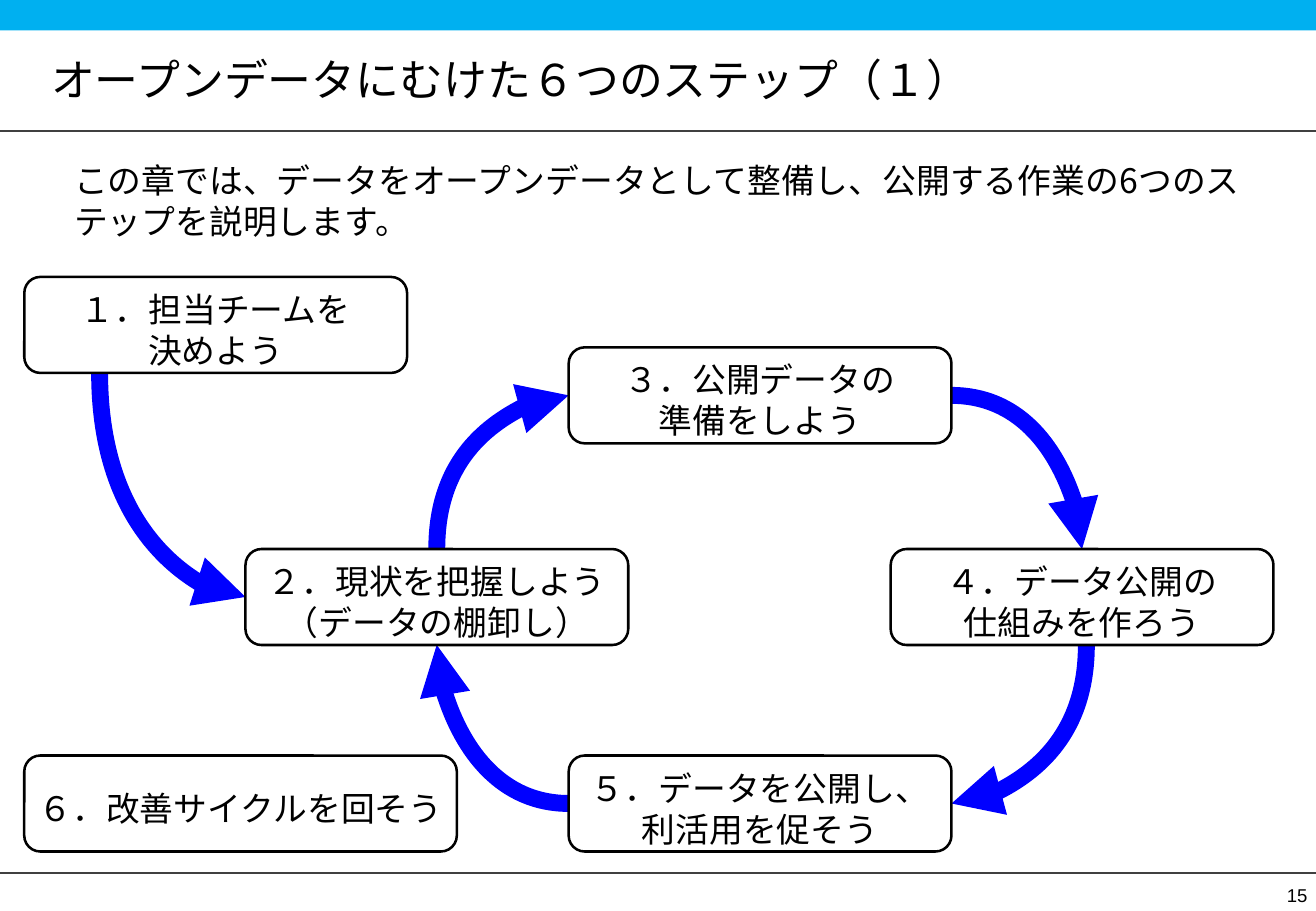
from dataclasses import dataclass

from pptx import Presentation
from pptx.dml.color import RGBColor
from pptx.enum.shapes import MSO_CONNECTOR, MSO_SHAPE
from pptx.enum.text import MSO_ANCHOR, PP_ALIGN
from pptx.oxml.ns import qn
from pptx.oxml.xmlchemy import OxmlElement
from pptx.shapes.autoshape import Shape
from pptx.shapes.connector import Connector
from pptx.slide import Slide
from pptx.util import Inches, Pt

COLORS = {
    "band": "00B0F0",
    "rule": "404040",
    "arrow": "0000FF",
    "text": "000000",
    "box": "FFFFFF",
}
JAPANESE_FONT = "Noto Sans CJK JP"
SLIDE_WIDTH, SLIDE_HEIGHT = 10.83, 7.5
STEP_WIDTH, STEP_HEIGHT = 3.15, 0.79

Point = tuple[float, float]


@dataclass
class TextFormat:
    size: float
    font: str = JAPANESE_FONT
    align: PP_ALIGN = PP_ALIGN.LEFT
    anchor: MSO_ANCHOR = MSO_ANCHOR.TOP
    insets: tuple[float, float, float, float] = (0, 0, 0, 0)
    wrap: bool = True
    line_spacing: float | None = None


@dataclass
class TextBlock:
    area: tuple[float, float, float, float]
    text: str
    style: TextFormat


@dataclass
class Step:
    left: float
    top: float
    lines: list[str]
    width: float = STEP_WIDTH

    @property
    def right(self) -> float:
        return self.left + self.width

    @property
    def bottom(self) -> float:
        return self.top + STEP_HEIGHT

    @property
    def center(self) -> float:
        return self.left + self.width / 2

    @property
    def middle(self) -> float:
        return self.top + STEP_HEIGHT / 2


@dataclass
class Arrow:
    start: Point
    end: Point
    leaves_vertically: bool


STEP_STYLE = TextFormat(20, align=PP_ALIGN.CENTER, anchor=MSO_ANCHOR.MIDDLE,
                        insets=(0.1, 0.12, 0.1, 0.05), wrap=False, line_spacing=24.3)

TEXT_BLOCKS = [
    TextBlock((0.42, 0.33, 9.99, 0.64), "オープンデータにむけた６つのステップ（１）",
              TextFormat(26, anchor=MSO_ANCHOR.MIDDLE)),
    TextBlock((0.61, 1.27, 9.61, 0.82),
              "この章では、データをオープンデータとして整備し、公開する作業の6つのステップを説明します。",
              TextFormat(20, insets=(0, 0.04, 0, 0.04), line_spacing=24.3)),
    TextBlock((10.39, 7.22, 0.44, 0.28), "15",
              TextFormat(11, "Arial", PP_ALIGN.RIGHT, MSO_ANCHOR.BOTTOM,
                         (0.07, 0.04, 0.07, 0.04))),
]

TEAM = Step(0.2, 2.28, ["１．担当チームを", "決めよう"])
SURVEY = Step(2.02, 4.52, ["２．現状を把握しよう", "（データの棚卸し）"])
PREPARE = Step(4.68, 2.86, ["３．公開データの", "準備をしよう"])
SYSTEM = Step(7.33, 4.52, ["４．データ公開の", "仕組みを作ろう"])
PUBLISH = Step(4.68, 6.22, ["５．データを公開し、", "利活用を促そう"])
IMPROVE = Step(0.2, 6.22, ["６．改善サイクルを回そう"], width=3.56)
STEPS = [TEAM, SURVEY, PREPARE, SYSTEM, PUBLISH, IMPROVE]

ARROWS = [
    Arrow((0.82, TEAM.bottom), (SURVEY.left, SURVEY.middle), True),
    Arrow((SURVEY.center, SURVEY.top), (PREPARE.left, PREPARE.middle), True),
    Arrow((PREPARE.right, PREPARE.middle), (SYSTEM.center, SYSTEM.top), False),
    Arrow((8.94, SYSTEM.bottom), (PUBLISH.right, PUBLISH.middle), True),
    Arrow((PUBLISH.left, PUBLISH.middle), (SURVEY.center, SURVEY.bottom), False),
]


def color(name: str) -> RGBColor:
    return RGBColor.from_string(COLORS[name])


def set_attributes(target: object, values: dict[str, object]) -> None:
    for name, value in values.items():
        setattr(target, name, value)


def write_text(shape: Shape, lines: list[str], style: TextFormat) -> None:
    frame = shape.text_frame
    left, top, right, bottom = map(Inches, style.insets)
    set_attributes(frame, {
        "word_wrap": style.wrap, "vertical_anchor": style.anchor,
        "margin_left": left, "margin_top": top,
        "margin_right": right, "margin_bottom": bottom,
    })
    for index, line in enumerate(lines):
        paragraph = frame.add_paragraph() if index else frame.paragraphs[0]
        paragraph.alignment = style.align
        if style.line_spacing:
            paragraph.line_spacing = Pt(style.line_spacing)
        run = paragraph.add_run()
        run.text = line
        set_attributes(run.font, {"size": Pt(style.size), "name": style.font})
        run.font.color.rgb = color("text")
        east_asian = OxmlElement("a:ea")
        east_asian.set("typeface", style.font)
        run.font._element.append(east_asian)


def add_box(slide: Slide, kind: MSO_SHAPE, area: tuple[float, ...], fill: str) -> Shape:
    shape = slide.shapes.add_shape(kind, *map(Inches, area))
    shape.shadow.inherit = False
    shape.fill.solid()
    shape.fill.fore_color.rgb = color(fill)
    return shape


def add_line(slide: Slide, kind: MSO_CONNECTOR, start: Point, end: Point,
             line_color: str, width: float) -> Connector:
    connector = slide.shapes.add_connector(kind, *map(Inches, (*start, *end)))
    connector.line.color.rgb = color(line_color)
    connector.line.width = Pt(width)
    connector.element.spPr.append(OxmlElement("a:effectLst"))
    return connector


def add_arrow(slide: Slide, arrow: Arrow) -> None:
    """Draw a quarter curve; one leaving vertically is laid out flat, then turned by 90°."""
    start, end = arrow.start, arrow.end
    if arrow.leaves_vertically:
        x, y = (start[0] + end[0]) / 2, (start[1] + end[1]) / 2
        half_x, half_y = (end[1] - start[1]) / 2, (start[0] - end[0]) / 2
        start, end = (x - half_x, y - half_y), (x + half_x, y + half_y)
    connector = add_line(slide, MSO_CONNECTOR.CURVE, start, end, "arrow", 10)
    properties = connector.element.spPr
    properties.find(qn("a:prstGeom")).set("prst", "curvedConnector2")
    if arrow.leaves_vertically:
        properties.find(qn("a:xfrm")).set("rot", str(90 * 60000))
    head = OxmlElement("a:tailEnd")
    head.set("type", "triangle")
    properties.find(qn("a:ln")).append(head)


def add_step(slide: Slide, step: Step) -> None:
    area = (step.left, step.top, step.width, STEP_HEIGHT)
    shape = add_box(slide, MSO_SHAPE.ROUNDED_RECTANGLE, area, "box")
    shape.line.color.rgb = color("text")
    shape.line.width = Pt(1.5)
    write_text(shape, step.lines, STEP_STYLE)


def main() -> None:
    presentation = Presentation()
    set_attributes(presentation, {"slide_width": Inches(SLIDE_WIDTH),
                                  "slide_height": Inches(SLIDE_HEIGHT)})
    slide = presentation.slides.add_slide(presentation.slide_layouts[6])
    band = add_box(slide, MSO_SHAPE.RECTANGLE, (0, 0, SLIDE_WIDTH, 0.25), "band")
    band.line.fill.background()
    for y in (1.08, 7.19):
        add_line(slide, MSO_CONNECTOR.STRAIGHT, (0, y), (SLIDE_WIDTH, y), "rule", 1)
    for block in TEXT_BLOCKS:
        write_text(slide.shapes.add_textbox(*map(Inches, block.area)), [block.text], block.style)
    for arrow in ARROWS:
        add_arrow(slide, arrow)
    for step in STEPS:
        add_step(slide, step)
    presentation.save("out.pptx")


if __name__ == "__main__":
    main()
